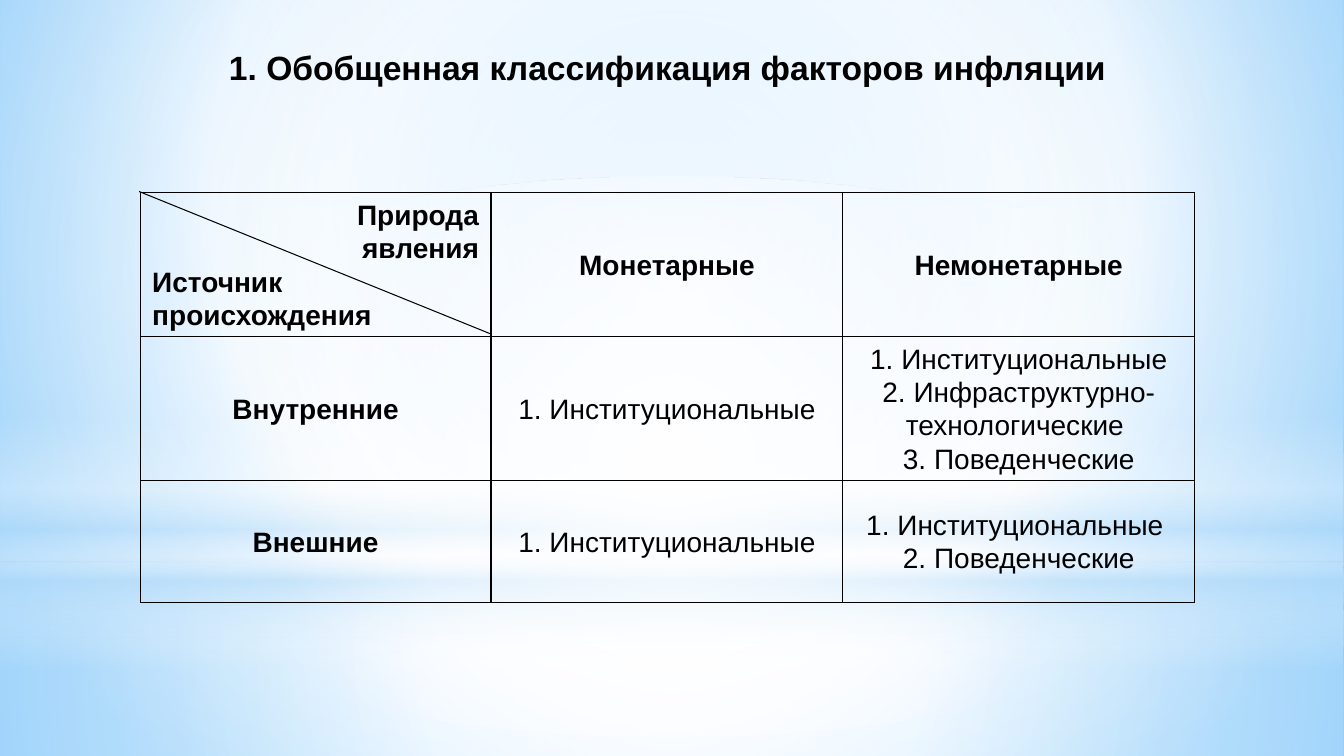
from dataclasses import dataclass
from typing import Optional

from lxml import etree
from pptx import Presentation
from pptx.dml.color import RGBColor
from pptx.enum.shapes import MSO_CONNECTOR as Line, MSO_SHAPE as Shape
from pptx.enum.text import MSO_ANCHOR as Anchor, PP_ALIGN as Align
from pptx.oxml.ns import qn
from pptx.util import Inches, Pt

BLACK = RGBColor(0x00, 0x00, 0x00)
WHITE = RGBColor(0xFF, 0xFF, 0xFF)
PALE = RGBColor(0xB4, 0xDC, 0xFA)
SKY = RGBColor(0x9E, 0xD5, 0xFF)
BLUE = RGBColor(0x5B, 0xB9, 0xFF)

FONT = "Arial"
COLS = (3.48, 3.49, 3.49)
ROWS = (1.34, 1.34, 1.21)
WIDE, HIGH = 13.33, 7.5


@dataclass
class Stop:
    at: int
    color: RGBColor
    alpha: int = 100


@dataclass
class Blend:
    """A gradient: circular around focus (left, top, right, bottom), else downward."""
    stops: list[Stop]
    focus: Optional[tuple[int, int, int, int]] = (50, 50, 50, 50)


@dataclass
class Glow:
    top: float
    high: float
    blend: Blend
    form: Shape = Shape.RECTANGLE


@dataclass
class Entry:
    lines: list[str]
    bold: bool = False
    right: int = 0
    left: int = 0

    def align(self, i: int) -> Align:
        if i < self.right:
            return Align.RIGHT
        return Align.LEFT if i < self.right + self.left else Align.CENTER


BACK = Blend([Stop(0, SKY), Stop(60, WHITE), Stop(100, BLUE)], (20, 10, 20, 60))
GLOWS = [
    Glow(5.58, 1.92, Blend([Stop(0, WHITE, 91), Stop(37, WHITE, 76), Stop(100, PALE, 79)])),
    Glow(0, 5.58, Blend([Stop(0, WHITE, 89), Stop(48, WHITE, 62), Stop(100, PALE, 79)])),
    Glow(4.12, 2.5, Blend([Stop(0, WHITE, 0), Stop(29, WHITE, 30), Stop(45, PALE, 40),
                           Stop(55, WHITE, 26), Stop(65, PALE, 60),
                           Stop(100, WHITE, 0)], None)),
    Glow(1.75, 5.58, Blend([Stop(0, WHITE), Stop(56, WHITE, 0)]), Shape.OVAL),
]
GRID = [
    [Entry(["Природа", "явления", "Источник", "происхождения"], True, 2, 2),
     Entry(["Монетарные"], True),
     Entry(["Немонетарные"], True)],
    [Entry(["Внутренние"], True),
     Entry(["1. Институциональные"]),
     Entry(["1. Институциональные", "2. Инфраструктурно-технологические ",
            "3. Поведенческие"])],
    [Entry(["Внешние"], True),
     Entry(["1. Институциональные"]),
     Entry(["1. Институциональные ", "2. Поведенческие"])],
]


def paint(fill, props, blend: Blend) -> None:
    """Put a gradient where the fill of props belongs."""
    fill.background()
    grad = etree.Element(qn("a:gradFill"), rotWithShape="1")
    stops = etree.SubElement(grad, qn("a:gsLst"))
    for stop in blend.stops:
        mark = etree.SubElement(stops, qn("a:gs"), pos=str(stop.at * 1000))
        tint = etree.SubElement(mark, qn("a:srgbClr"), val=str(stop.color))
        if stop.alpha < 100:
            etree.SubElement(tint, qn("a:alpha"), val=str(stop.alpha * 1000))
    if blend.focus:
        way = etree.SubElement(grad, qn("a:path"), path="circle")
        sides = {k: str(v * 1000) for k, v in zip("ltrb", blend.focus)}
        etree.SubElement(way, qn("a:fillToRect"), sides)
    else:
        etree.SubElement(grad, qn("a:lin"), ang="5400000", scaled="0")
    props.replace(props.find(qn("a:noFill")), grad)


def add_glow(slide, glow: Glow) -> None:
    shape = slide.shapes.add_shape(glow.form, 0, Inches(glow.top),
                                   Inches(WIDE), Inches(glow.high))
    shape.shadow.inherit = False
    shape.line.fill.background()
    paint(shape.fill, shape.element.spPr, glow.blend)


def write(para, text: str, size: int, bold: bool, align: Align, space: float) -> None:
    para.text = text
    para.alignment = align
    para.line_spacing = space
    font = para.font
    font.name, font.size, font.bold = FONT, Pt(size), bold
    font.color.rgb = BLACK


def add_title(slide, text: str) -> None:
    box = slide.shapes.add_textbox(Inches(0.18), Inches(0.31), Inches(12.88), Inches(0.76))
    frame = box.text_frame
    frame.word_wrap = True
    frame.vertical_anchor = Anchor.MIDDLE
    write(frame.paragraphs[0], text, 24, True, Align.CENTER, 0.9)


def add_edges(cell) -> None:
    props = cell._tc.get_or_add_tcPr()
    for side in "LRTB":
        edge = etree.SubElement(props, qn(f"a:ln{side}"), w=str(Pt(1)))
        fill = etree.SubElement(edge, qn("a:solidFill"))
        etree.SubElement(fill, qn("a:srgbClr"), val=str(BLACK))


def fill_cell(cell, entry: Entry) -> None:
    add_edges(cell)
    cell.fill.background()
    cell.vertical_anchor = Anchor.MIDDLE
    cell.margin_left = cell.margin_right = Inches(0.12)
    cell.margin_top = cell.margin_bottom = 0
    frame = cell.text_frame
    for i, text in enumerate(entry.lines):
        para = frame.add_paragraph() if i else frame.paragraphs[0]
        write(para, text, 20, entry.bold, entry.align(i), 1.07)


def add_grid(slide) -> None:
    table = slide.shapes.add_table(len(ROWS), len(COLS), Inches(1.39), Inches(1.91),
                                   Inches(sum(COLS)), Inches(sum(ROWS))).table
    table.first_row = table.horz_banding = False
    for col, wide in zip(table.columns, COLS):
        col.width = Inches(wide)
    for row, high, entries in zip(table.rows, ROWS, GRID):
        row.height = Inches(high)
        for cell, entry in zip(row.cells, entries):
            fill_cell(cell, entry)


def add_slash(slide) -> None:
    """Split the corner cell of the table."""
    slash = slide.shapes.add_connector(Line.STRAIGHT, Inches(1.38), Inches(1.9),
                                       Inches(4.86), Inches(3.31))
    slash.line.color.rgb = BLACK
    slash.line.width = Pt(0.75)
    etree.SubElement(slash.element.spPr, qn("a:effectLst"))


def main() -> None:
    deck = Presentation()
    deck.slide_width, deck.slide_height = Inches(WIDE), Inches(HIGH)
    slide = deck.slides.add_slide(deck.slide_layouts[6])
    fill = slide.background.fill
    paint(fill, slide.element.find(f".//{qn('p:bgPr')}"), BACK)
    for glow in GLOWS:
        add_glow(slide, glow)
    add_title(slide, "1. Обобщенная классификация факторов инфляции")
    add_grid(slide)
    add_slash(slide)
    deck.save("out.pptx")


if __name__ == "__main__":
    main()
